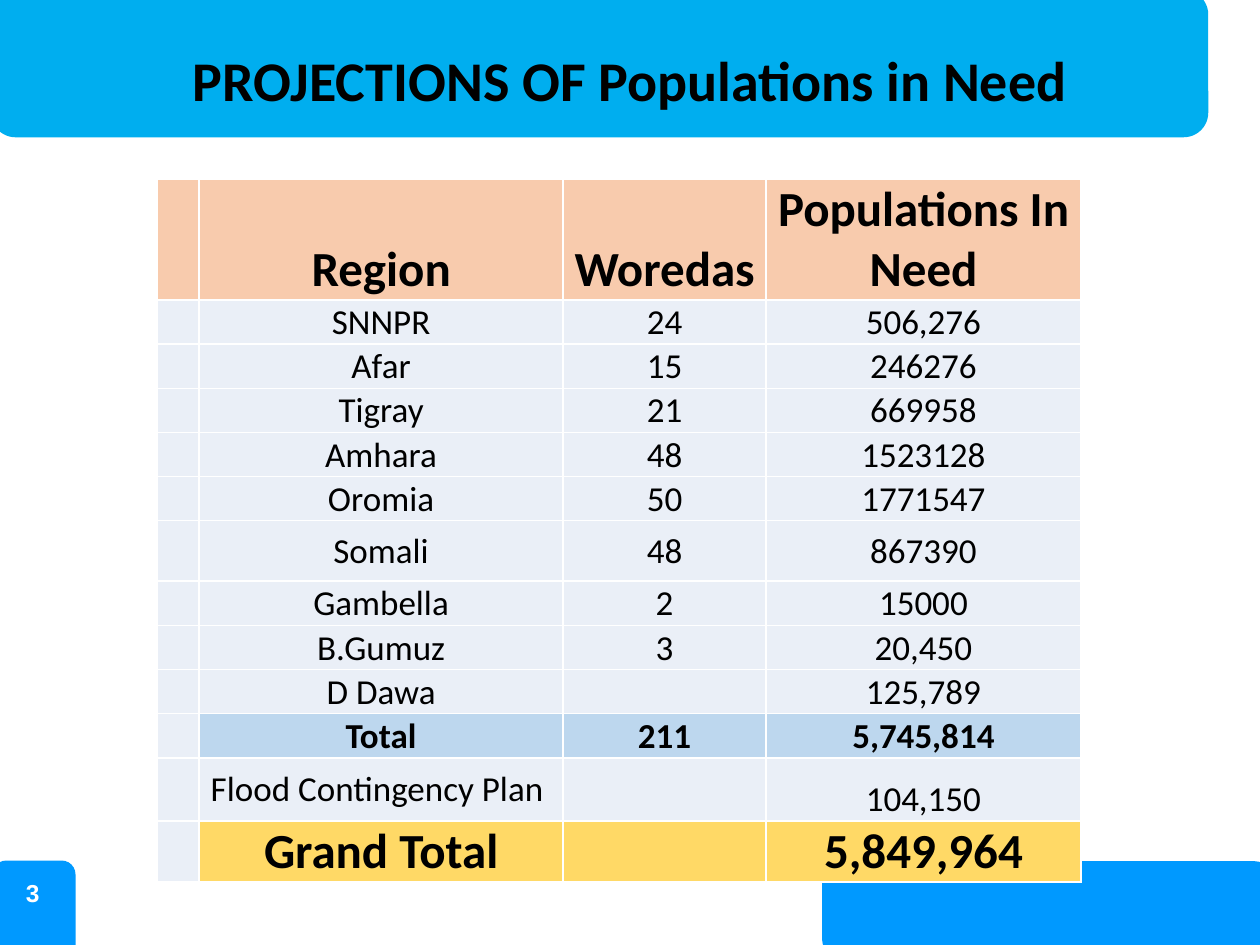
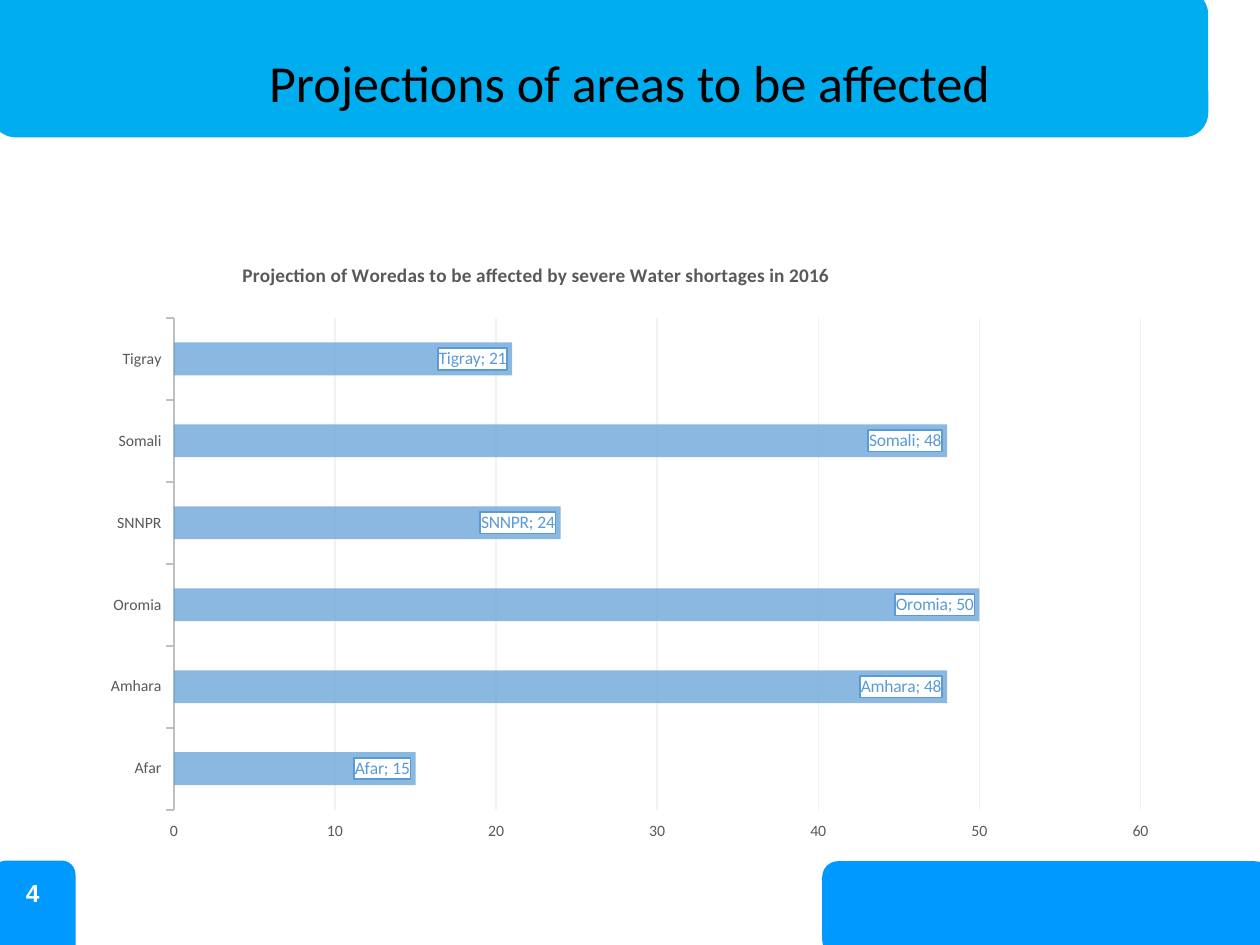
from lxml.etree import SubElement
from pptx import Presentation
from pptx.chart.data import CategoryChartData
from pptx.dml.color import RGBColor
from pptx.enum.chart import XL_CHART_TYPE, XL_LABEL_POSITION, XL_TICK_MARK
from pptx.enum.shapes import MSO_SHAPE
from pptx.enum.text import MSO_ANCHOR, MSO_AUTO_SIZE, PP_ALIGN
from pptx.oxml import parse_xml
from pptx.oxml.ns import nsdecls, qn
from pptx.util import Inches, Pt

BLACK = RGBColor(0x00, 0x00, 0x00)
WHITE = RGBColor(0xFF, 0xFF, 0xFF)
BAND_BLUE = RGBColor(0x00, 0xAE, 0xEF)
FOOTER_BLUE = RGBColor(0x00, 0x99, 0xFF)
HEADER_PEACH = RGBColor(0xF8, 0xCB, 0xAD)
ROW_PALE = RGBColor(0xEA, 0xEF, 0xF7)
TOTAL_BLUE = RGBColor(0xBD, 0xD7, 0xEE)
GRAND_GOLD = RGBColor(0xFF, 0xD9, 0x66)
BAR_BLUE = RGBColor(0x5B, 0x9B, 0xD5)
TEXT_GREY = RGBColor(0x59, 0x59, 0x59)
AXIS_GREY = RGBColor(0xBF, 0xBF, 0xBF)
GRID_GREY = RGBColor(0xF2, 0xF2, 0xF2)

FIRST_NUMBER = 3

# Region, woredas, populations in need
REGIONS = [
    ("Region", "Woredas", "Populations In Need"),
    ("SNNPR", "24", "506,276"),
    ("Afar", "15", "246276"),
    ("Tigray", "21", "669958"),
    ("Amhara", "48", "1523128"),
    ("Oromia", "50", "1771547"),
    ("Somali", "48", "867390"),
    ("Gambella", "2", "15000"),
    ("B.Gumuz", "3", "20,450"),
    ("D Dawa", "", "125,789"),
    ("Total", "211", "5,745,814"),
    ("Flood Contingency Plan ", "", "104,150"),
    ("Grand Total", "", "5,849,964"),
]
COLUMN_WIDTHS = [0.33, 2.89, 1.61, 2.5]
ROW_HEIGHT = 0.35
TALL_ROWS = {"Region": 0.96, "Somali": 0.48,
             "Flood Contingency Plan ": 0.5, "Grand Total": 0.48}
# Fill, size and weight of the rows that stand out
ROW_STYLES = {"Region": (HEADER_PEACH, 28, True), "Total": (TOTAL_BLUE, 20, True),
              "Grand Total": (GRAND_GOLD, 28, True)}
# Cells whose text sits at the bottom, by region and column
BOTTOM_CELLS = {("Region", 1), ("Region", 2), ("Total", 2), ("Total", 3),
                ("Flood Contingency Plan ", 3), ("Grand Total", 3)}

WOREDAS = {"Afar": 15, "Amhara": 48, "Oromia": 50, "SNNPR": 24, "Somali": 48, "Tigray": 21}


def style_font(font, size, color=BLACK, bold=False, name="Calibri"):
    font.name, font.size, font.bold = name, Pt(size), bold
    font.color.rgb = color


def manual_layout(parent, x, y, w=None, h=None):
    """Place a chart part by fractions of the chart's size."""
    for old in parent.findall(qn("c:layout")):
        parent.remove(old)
    settings = [("xMode", "edge"), ("yMode", "edge"), ("x", x), ("y", y)]
    if w:
        settings = [("layoutTarget", "inner")] + settings + [("w", w), ("h", h)]
    layout = parse_xml(f"<c:layout {nsdecls('c')}><c:manualLayout/></c:layout>")
    for tag, value in settings:
        SubElement(layout[0], qn(f"c:{tag}")).set("val", str(value))
    return layout


class Deck:
    def __init__(self):
        self.prs = Presentation()
        self.prs.slide_width, self.prs.slide_height = Inches(10), Inches(7.5)
        self.s = None

    def slide(self, title, top, size, bold=False):
        self.s = self.prs.slides.add_slide(self.prs.slide_layouts[5])
        # Bands and slide number
        self.band(-0.07, -0.08, 9.66, 1.17, BAND_BLUE)
        self.band(7.93, 5.43, 0.75, 3.56, FOOTER_BLUE, 90)
        self.band(-0.06, 6.83, 0.66, 1.06, FOOTER_BLUE)
        self.number(FIRST_NUMBER + len(self.prs.slides) - 1)
        # Title, in front of the bands
        sp = self.s.shapes.title
        self.s.shapes._spTree.append(sp._element)
        sp.left, sp.top, sp.width, sp.height = (Inches(v) for v in (0.69, top, 8.62, 0.52))
        tf = sp.text_frame
        tf.text = title
        tf.word_wrap, tf.auto_size = True, MSO_AUTO_SIZE.NONE
        tf.vertical_anchor = MSO_ANCHOR.MIDDLE
        p = tf.paragraphs[0]
        p.alignment, p.line_spacing = PP_ALIGN.CENTER, 0.9
        style_font(p.font, size, bold=bold)

    def band(self, left, top, width, height, color, rotation=0):
        sp = self.s.shapes.add_shape(MSO_SHAPE.ROUNDED_RECTANGLE, Inches(left),
                                     Inches(top), Inches(width), Inches(height))
        sp.shadow.inherit = False
        sp.rotation = rotation
        sp.fill.solid()
        sp.fill.fore_color.rgb = color
        sp.line.fill.background()

    def number(self, value):
        box = self.s.shapes.add_textbox(Inches(0), Inches(6.92), Inches(0.52), Inches(0.52))
        tf = box.text_frame
        tf.word_wrap = True
        p = tf.paragraphs[0]
        p.text, p.alignment = str(value), PP_ALIGN.CENTER
        style_font(p.font, 14, WHITE, True, "Arial")

    def cell(self, cell, text, fill, size, bold, anchor):
        cell.margin_left = cell.margin_right = cell.margin_top = Inches(0.01)
        cell.margin_bottom = 0
        cell.vertical_anchor = anchor
        p = cell.text_frame.paragraphs[0]
        p.text, p.alignment = text, PP_ALIGN.CENTER
        style_font(p.font, size, bold=bold)
        tcPr = cell._tc.get_or_add_tcPr()
        for side in "LRTB":
            tcPr.append(parse_xml(
                f'<a:ln{side} w="12700" {nsdecls("a")}><a:solidFill>'
                f'<a:srgbClr val="{WHITE}"/></a:solidFill></a:ln{side}>'))
        cell.fill.solid()
        cell.fill.fore_color.rgb = fill

    def table(self, left, top, rows):
        heights = [TALL_ROWS.get(row[0], ROW_HEIGHT) for row in rows]
        table = self.s.shapes.add_table(
            len(rows), len(COLUMN_WIDTHS), Inches(left), Inches(top),
            Inches(sum(COLUMN_WIDTHS)), Inches(sum(heights))).table
        table.first_row = table.horz_banding = False
        for column, width in zip(table.columns, COLUMN_WIDTHS):
            column.width = Inches(width)
        for i, row in enumerate(rows):
            region = row[0]
            table.rows[i].height = Inches(heights[i])
            fill, size, bold = ROW_STYLES.get(region, (ROW_PALE, 20, False))
            for j, text in enumerate(("",) + row):
                # The narrow first column is coloured only in the header
                cell_fill = ROW_PALE if j == 0 and i > 0 else fill
                anchor = (MSO_ANCHOR.BOTTOM if (region, j) in BOTTOM_CELLS
                          else MSO_ANCHOR.MIDDLE)
                self.cell(table.cell(i, j), text, cell_fill, size if text else 12, bold, anchor)

    def bar_chart(self, left, top, width, height, title, values):
        data = CategoryChartData()
        data.categories = list(values)
        data.add_series("Series 1", list(values.values()))
        chart = self.s.shapes.add_chart(
            XL_CHART_TYPE.BAR_CLUSTERED, Inches(left), Inches(top),
            Inches(width), Inches(height), data).chart
        chart.has_legend = False
        style_font(chart.font, 10)

        # Chart title and plot area
        tf = chart.chart_title.text_frame
        tf.text = title
        style_font(tf.paragraphs[0].font, 11, TEXT_GREY, True)
        title_xml = chart.chart_title._element
        title_xml.find(qn("c:tx")).addnext(manual_layout(title_xml, 0.14, 0.01))
        plot_area = chart._chartSpace.chart.plotArea
        plot_area.insert(0, manual_layout(plot_area, 0.08, 0.11, 0.89, 0.82))

        # Axes
        for axis in (chart.category_axis, chart.value_axis):
            axis.major_tick_mark = XL_TICK_MARK.OUTSIDE
            axis.minor_tick_mark = XL_TICK_MARK.NONE
            style_font(axis.tick_labels.font, 9, TEXT_GREY)
        line = chart.category_axis.format.line
        line.color.rgb, line.width = AXIS_GREY, Pt(1.25)
        axis = chart.value_axis
        axis.minimum_scale, axis.maximum_scale, axis.major_unit = 0, 60, 10
        axis.format.line.fill.background()
        grid = axis.major_gridlines.format.line
        grid.color.rgb, grid.width = GRID_GREY, Pt(0.75)

        # Bars, 70 % opaque
        plot = chart.plots[0]
        plot.gap_width, plot.vary_by_categories = 150, False
        series = plot.series[0]
        series.format.fill.solid()
        series.format.fill.fore_color.rgb = BAR_BLUE
        color = series._element.find(".//" + qn("a:srgbClr"))
        SubElement(color, qn("a:alpha")).set("val", "70000")

        # Boxed labels
        labels = series.data_labels
        labels.show_value = labels.show_category_name = True
        labels.position = XL_LABEL_POSITION.INSIDE_END
        style_font(labels.font, 10, BAR_BLUE)
        xml = labels._element
        xml.find(qn("c:txPr")).addprevious(parse_xml(
            f'<c:spPr {nsdecls("c", "a")}><a:solidFill><a:srgbClr val="{WHITE}"/></a:solidFill>'
            f'<a:ln w="12700"><a:solidFill><a:srgbClr val="{BAR_BLUE}"/></a:solidFill></a:ln>'
            '</c:spPr>'))
        xml.find(qn("c:showBubbleSize")).addnext(
            parse_xml(f"<c:separator {nsdecls('c')}>; </c:separator>"))


def main():
    deck = Deck()

    # Populations in need
    deck.slide("PROJECTIONS OF Populations in Need", 0.4, 32, bold=True)
    deck.table(1.25, 1.42, REGIONS)

    # Areas to be affected
    deck.slide("Projections of areas to be affected", 0.42, 29.7)
    deck.bar_chart(0.69, 2, 8.62, 4.76,
                   "Projection of Woredas to be affected by severe Water shortages in 2016",
                   WOREDAS)

    deck.prs.save("out.pptx")


if __name__ == "__main__":
    main()
